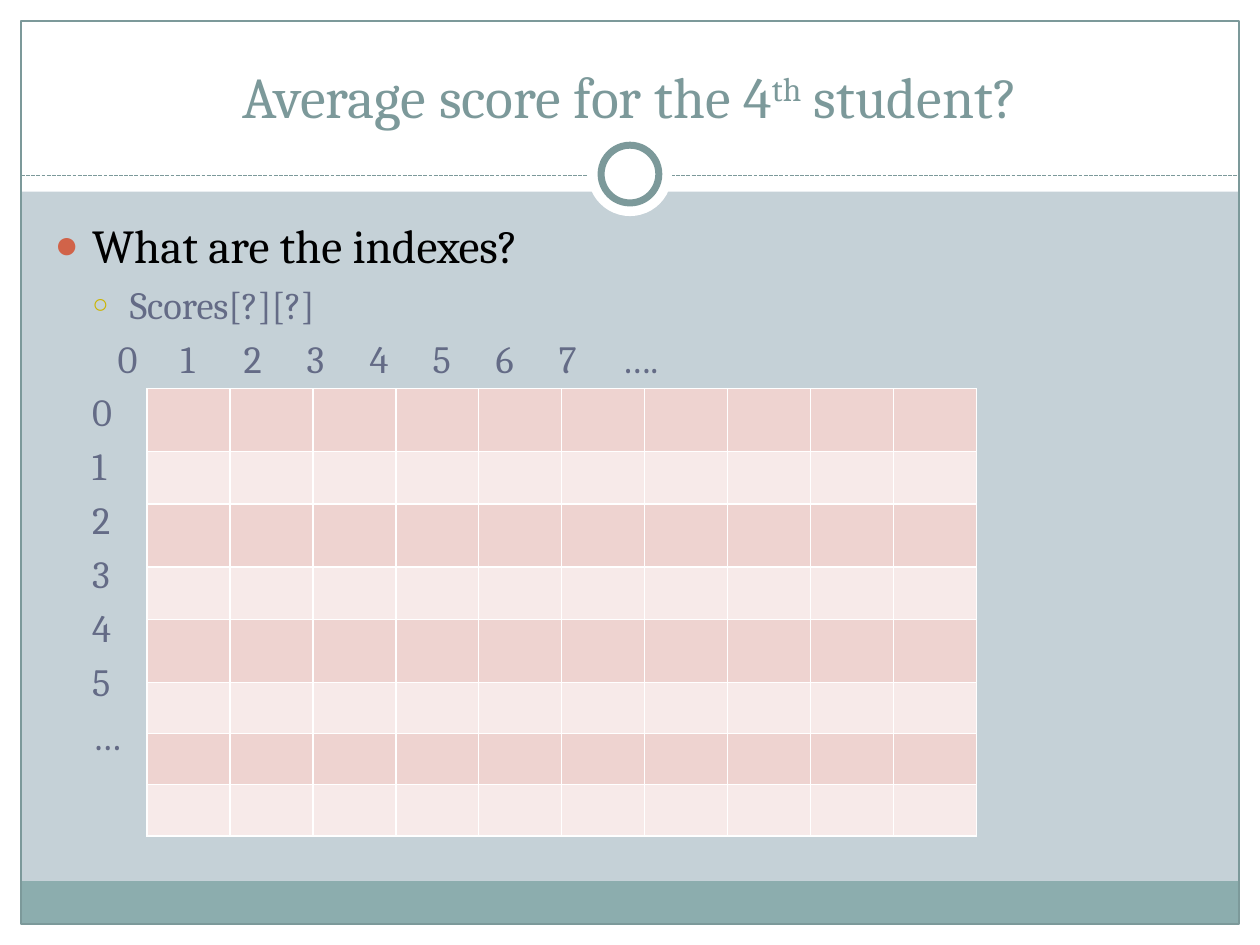
from lxml import etree
from pptx import Presentation
from pptx.dml.color import RGBColor
from pptx.enum.dml import MSO_LINE
from pptx.enum.shapes import MSO_CONNECTOR, MSO_SHAPE
from pptx.enum.text import MSO_ANCHOR, MSO_AUTO_SIZE, PP_ALIGN
from pptx.oxml.ns import qn
from pptx.util import Pt

RECT, OVAL = MSO_SHAPE.RECTANGLE, MSO_SHAPE.OVAL
STRAIGHT, DASH = MSO_CONNECTOR.STRAIGHT, MSO_LINE.SQUARE_DOT
TOP, BOTTOM = MSO_ANCHOR.TOP, MSO_ANCHOR.BOTTOM
CENTER, LEFT = PP_ALIGN.CENTER, PP_ALIGN.LEFT
NO_FIT = MSO_AUTO_SIZE.NONE

FONT = "Cambria"
WHITE, TEAL, SLATE = "FFFFFF", "7C999A", "646B86"
BACKGROUND, FOOTER, BLACK = "C5D1D7", "8CADAE", "000000"
BANDS = ["EED3D0", "F7EAE9"]

TITLE = [("Average score for the 4", 0), ("th", 30000), (" student?", 0)]
BULLETS = [
    {"text": "What are the indexes?", "level": 0, "size": 27, "color": BLACK,
     "mark": ("●", "D16349", 85)},
    {"text": "Scores[?][?]", "level": 1, "size": 22, "color": SLATE,
     "mark": ("○", "CCB400", 70)},
]
COLUMN_LABELS = [("0", 64), ("1", 104), ("2", 151), ("3", 190.5), ("4", 234.5),
                 ("5", 279), ("6", 323), ("7", 362.5), ("….", 403.5)]
ROW_LABELS = ["0", "1", "2", "3", "4", "5", "…"]

FRAME_SHAPES = [
    (RECT, (0, 528, 720, 12), WHITE, None, 0),
    (RECT, (0, 0, 720, 109.5), WHITE, None, 0),
    (RECT, (0, 0, 12, 540), WHITE, None, 0),
    (RECT, (708, 0, 12, 540), WHITE, None, 0),
    (RECT, (12, 503.5, 695.5, 24.5), FOOTER, None, 0),
    (RECT, (12, 12, 696, 516), None, TEAL, 0.75),
]
RINGS = [
    (OVAL, (336, 75.5, 48, 48), WHITE, None, 0),
    (OVAL, (343.5, 83, 33, 33), WHITE, TEAL, 4),
]
TITLE_BOX = (24, 18, 672, 60)
BODY_BOX = (24, 120, 672, 408)
INDENT = 21.5
COLUMN_COUNT, COLUMN_WIDTH = 10, 47.4
ROW_HEIGHTS = [36, 30, 36, 30, 36, 28, 28, 28]
TABLE_LEFT, TABLE_TOP = 84, 222


def rgb(code):
    """Turn a hex string into a colour."""
    return RGBColor.from_string(code)


def points(values):
    """Turn plain numbers into lengths."""
    return [Pt(value) for value in values]


def add_node(parent, tag, **attributes):
    """Append an XML child with the given attributes."""
    node = etree.SubElement(parent, qn(tag))
    for name, value in attributes.items():
        node.set(name, str(value))
    return node


def add_frame_shape(slide, kind, place, fill, line, width):
    """Add one decorative shape."""
    shape = slide.shapes.add_shape(kind, *points(place))
    shape.shadow.inherit = False
    if fill:
        shape.fill.solid()
        shape.fill.fore_color.rgb = rgb(fill)
    else:
        shape.fill.background()
    if line:
        shape.line.color.rgb = rgb(line)
        shape.line.width = Pt(width)
    else:
        shape.line.fill.background()


def add_divider(slide):
    """Add the dashed line under the title."""
    line = slide.shapes.add_connector(STRAIGHT, *points((12, 100.5, 708, 100.5)))
    line.line.color.rgb = rgb(TEAL)
    line.line.width = Pt(0.75)
    line.line.dash_style = DASH
    add_node(line._element.spPr, "a:effectLst")


def place_placeholder(slide, box, place, anchor):
    """Move a placeholder to its place, in front of the decoration."""
    box.left, box.top, box.width, box.height = points(place)
    frame = box.text_frame
    frame.word_wrap = True
    frame.auto_size = NO_FIT
    frame.vertical_anchor = anchor
    slide.shapes._spTree.append(box._element)
    return frame


def style_span(span, size, color):
    """Set font, size and colour of a run."""
    span.font.name = FONT
    span.font.size = Pt(size)
    span.font.color.rgb = rgb(color)


def fill_title(frame):
    """Write the title with its raised ordinal."""
    para = frame.paragraphs[0]
    para.alignment = CENTER
    for text, baseline in TITLE:
        span = para.add_run()
        span.text = text
        style_span(span, 33, TEAL)
        if baseline:
            span.font._element.set("baseline", str(baseline))


def write_line(para, text, level=1, size=22, color=SLATE, mark=None,
               margin=INDENT, tabs=()):
    """Write one body line with its bullet, indent and tab stops."""
    para.text = text
    para.level = level
    para.alignment = LEFT
    style_span(para.runs[0], size, color)
    properties = para._p.get_or_add_pPr()
    if mark:
        symbol, tint, percent = mark
        margin = INDENT * (level + 1)
        add_node(add_node(properties, "a:buClr"), "a:srgbClr", val=tint)
        add_node(properties, "a:buSzPct", val=percent * 1000)
        add_node(properties, "a:buChar", char=symbol)
    else:
        add_node(properties, "a:buNone")
    properties.set("marL", str(Pt(margin)))
    properties.set("indent", str(Pt(-INDENT if mark else 0)))
    if tabs:
        stops = add_node(properties, "a:tabLst")
        for position in tabs:
            add_node(stops, "a:tab", pos=Pt(position), algn="l")


def fill_body(frame):
    """Write the bullets and the index labels."""
    labels, tabs = zip(*COLUMN_LABELS)
    header = {"text": "\t" + "\t".join(labels), "margin": 0, "tabs": tabs}
    lines = BULLETS + [header] + [{"text": label} for label in ROW_LABELS]
    for number, line in enumerate(lines):
        para = frame.add_paragraph() if number else frame.paragraphs[0]
        write_line(para, **line)


def add_score_table(slide):
    """Add the banded grid of scores."""
    place = (TABLE_LEFT, TABLE_TOP, COLUMN_COUNT * COLUMN_WIDTH, sum(ROW_HEIGHTS))
    table = slide.shapes.add_table(len(ROW_HEIGHTS), COLUMN_COUNT, *points(place)).table
    for column in table.columns:
        column.width = Pt(COLUMN_WIDTH)
    for number, height in enumerate(ROW_HEIGHTS):
        table.rows[number].height = Pt(height)
        for cell in table.rows[number].cells:
            properties = cell._tc.get_or_add_tcPr()
            for side in ("a:lnL", "a:lnR", "a:lnT", "a:lnB"):
                border = add_node(properties, side, w=Pt(1))
                add_node(add_node(border, "a:solidFill"), "a:srgbClr", val=WHITE)
            cell.fill.solid()
            cell.fill.fore_color.rgb = rgb(BANDS[number % 2])


def main():
    """Build and save the slide."""
    deck = Presentation()
    deck.slide_width, deck.slide_height = points((720, 540))
    page = deck.slides.add_slide(deck.slide_layouts[1])
    page.background.fill.solid()
    page.background.fill.fore_color.rgb = rgb(BACKGROUND)
    for item in FRAME_SHAPES:
        add_frame_shape(page, *item)
    add_divider(page)
    for item in RINGS:
        add_frame_shape(page, *item)
    title, body = page.shapes.title, page.placeholders[1]
    fill_title(place_placeholder(page, title, TITLE_BOX, BOTTOM))
    fill_body(place_placeholder(page, body, BODY_BOX, TOP))
    add_score_table(page)
    deck.save("out.pptx")


if __name__ == "__main__":
    main()
